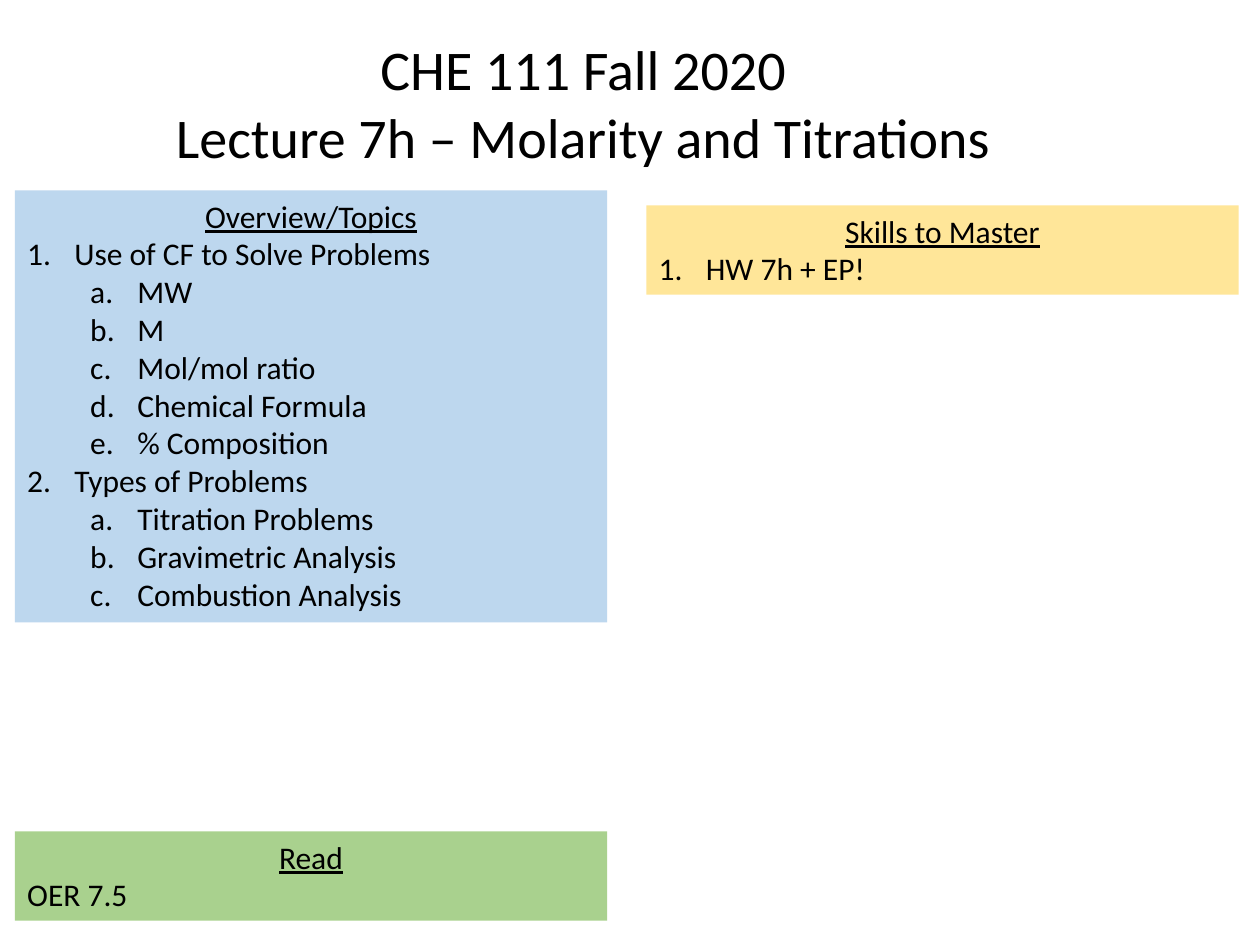
from lxml import etree
from pptx import Presentation
from pptx.dml.color import RGBColor
from pptx.enum.shapes import MSO_SHAPE
from pptx.enum.text import MSO_ANCHOR, MSO_AUTO_SIZE, PP_ALIGN
from pptx.oxml.ns import qn
from pptx.util import Cm, Pt

RECTANGLE = MSO_SHAPE.RECTANGLE
LEFT, CENTER = PP_ALIGN.LEFT, PP_ALIGN.CENTER
TOP = MSO_ANCHOR.TOP
GROW = MSO_AUTO_SIZE.SHAPE_TO_FIT_TEXT

COLORS = {
    "text": "000000",
    "topics": "BDD7EE",
    "skills": "FFE699",
    "reading": "A9D18E",
}
FONT = "Calibri"
HANGING = 0.95
NUMBERING = ["arabicPeriod", "alphaLcPeriod"]
INDENTS = [HANGING, 2.22]

TOPICS = [
    (0, "Use of CF to Solve Problems"),
    (1, "MW"),
    (1, "M"),
    (1, "Mol/mol ratio"),
    (1, "Chemical Formula"),
    (1, "% Composition"),
    (0, "Types of Problems"),
    (1, "Titration Problems"),
    (1, "Gravimetric Analysis"),
    (1, "Combustion Analysis"),
]
SKILLS = [(0, "HW 7h + EP!")]
READING = [(None, "OER 7.5")]


def write_line(para, text, size, align):
    para.text = text
    para.alignment = align
    para.font.name = FONT
    para.font.size = Pt(size)
    para.font.color.rgb = RGBColor.from_string(COLORS["text"])


def number_line(para, level):
    """Give a paragraph automatic numbering and a hanging indent."""
    para.level = level
    properties = para._p.get_or_add_pPr()
    properties.set("marL", str(Cm(INDENTS[level])))
    properties.set("indent", str(-Cm(HANGING)))
    number = etree.Element(qn("a:buAutoNum"), type=NUMBERING[level])
    properties.insert(0, number)


def add_title(page, left, top, width, height, lines):
    box = page.shapes.add_textbox(Cm(left), Cm(top), Cm(width), Cm(height))
    frame = box.text_frame
    frame.word_wrap = False
    frame.auto_size = GROW
    for index, line in enumerate(lines):
        para = frame.add_paragraph() if index else frame.paragraphs[0]
        write_line(para, line, 32, CENTER)


def add_panel(page, left, top, width, height, color, heading, items):
    box = page.shapes.add_shape(RECTANGLE, Cm(left), Cm(top), Cm(width), Cm(height))
    box.shadow.inherit = False
    box.fill.solid()
    box.fill.fore_color.rgb = RGBColor.from_string(COLORS[color])
    box.line.fill.background()

    frame = box.text_frame
    frame.word_wrap = True
    frame.auto_size = GROW
    frame.vertical_anchor = TOP

    # Underlined heading
    title = frame.paragraphs[0]
    write_line(title, heading, 18, CENTER)
    title.font.underline = True

    # Items, numbered where a level is given
    for level, text in items:
        para = frame.add_paragraph()
        write_line(para, text, 18, LEFT)
        if level is not None:
            number_line(para, level)


def main():
    deck = Presentation()
    deck.slide_width, deck.slide_height = Cm(25.4), Cm(19.05)
    page = deck.slides.add_slide(deck.slide_layouts[6])

    left, right, width = 0.3, 13.03, 11.94
    add_panel(page, left, 3.84, width, 8.71, "topics", "Overview/Topics", TOPICS)
    add_panel(page, right, 4.14, width, 1.8, "skills", "Skills to Master", SKILLS)
    add_panel(page, left, 16.76, width, 1.8, "reading", "Read", READING)
    add_title(page, 3.2, 0.58, 17.12, 3,
              ["CHE 111 Fall 2020", "Lecture 7h – Molarity and Titrations"])

    deck.save("out.pptx")


if __name__ == "__main__":
    main()
